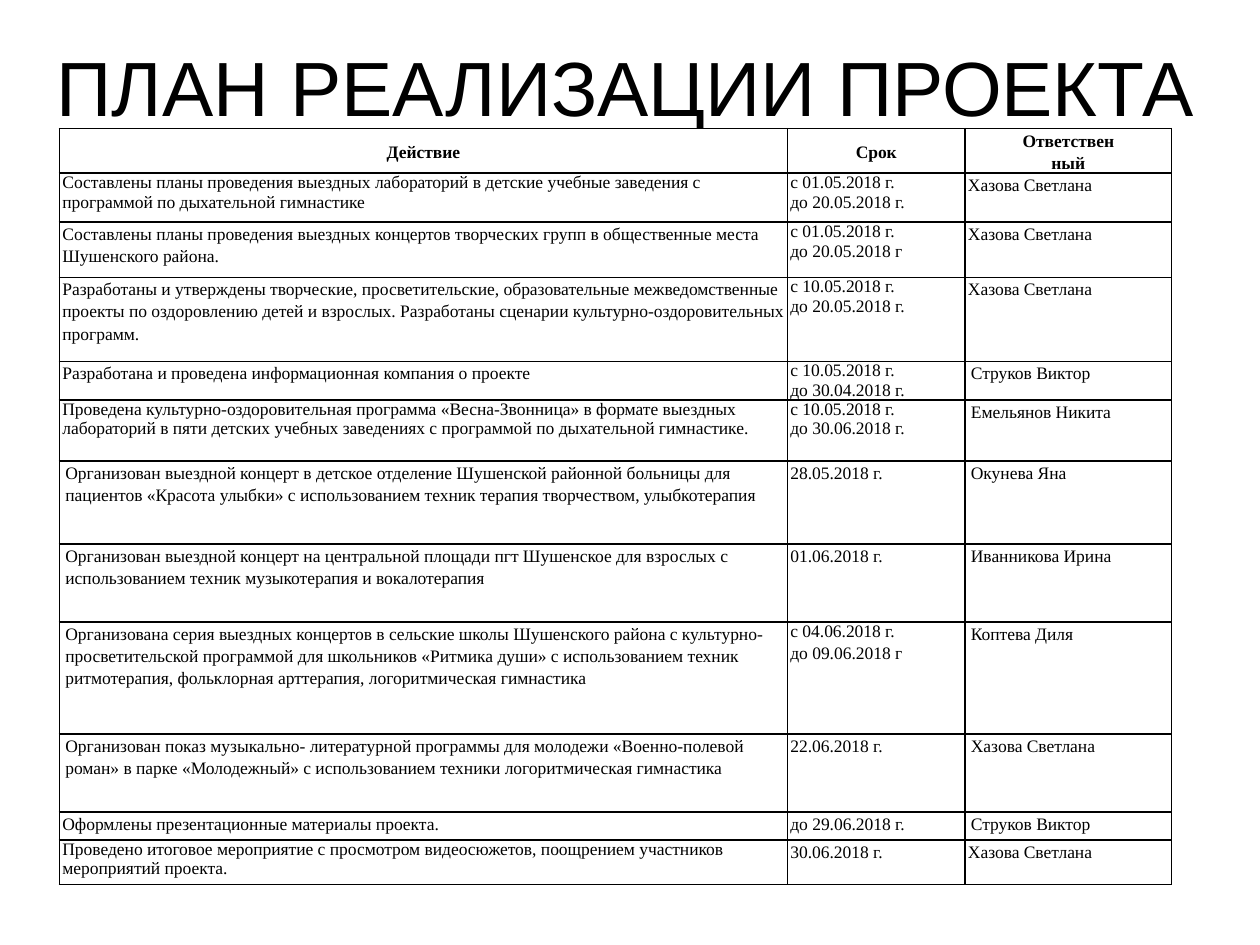
import dataclasses

import lxml.etree
import pptx
import pptx.dml.color
import pptx.enum.text
import pptx.oxml.ns
import pptx.util

Pt = pptx.util.Pt
RGB = pptx.dml.color.RGBColor
ALIGN = pptx.enum.text.PP_ALIGN
ANCHOR = pptx.enum.text.MSO_ANCHOR
qn = pptx.oxml.ns.qn


@dataclasses.dataclass(frozen=True)
class Theme:
    ink: str = "000000"
    paper: str = "FFFFFF"
    head: str = "Arial"
    body: str = "Times New Roman"
    big: float = 43.9
    small: float = 10
    line: float = 1
    pad: float = 1.7
    loose: float = 1.15


THEME = Theme()
COLS = [416, 101.5, 118]
HEADS = ["Действие", "Срок", "Ответствен\nный"]
# Height, action, dates, person, action is single spaced, left indents
ROWS = [
    (28, "Составлены планы проведения выездных лабораторий в детские учебные "
     "заведения с программой по дыхательной гимнастике",
     "с 01.05.2018 г.\nдо 20.05.2018 г.", "Хазова Светлана", True, (0, 0)),
    (31.5, "Составлены планы проведения выездных концертов творческих групп в "
     "общественные места Шушенского района.",
     "с 01.05.2018 г.\nдо 20.05.2018 г", "Хазова Светлана", False, (0, 0)),
    (48, "Разработаны и утверждены творческие, просветительские, "
     "образовательные межведомственные проекты по оздоровлению детей и "
     "взрослых. Разработаны сценарии культурно-оздоровительных программ.",
     "с 10.05.2018 г.\nдо 20.05.2018 г.", "Хазова Светлана", False, (0, 0)),
    (22, "Разработана и проведена информационная компания о проекте",
     "с 10.05.2018 г.\nдо 30.04.2018 г.", "Струков Виктор", False, (0, 1.7)),
    (35, "Проведена культурно-оздоровительная программа «Весна-Звонница» в "
     "формате выездных лабораторий в пяти детских учебных заведениях с "
     "программой по дыхательной гимнастике.",
     "с 10.05.2018 г.\nдо 30.06.2018 г.", "Емельянов Никита", True, (0, 1.7)),
    (47.5, "Организован выездной концерт в детское отделение Шушенской "
     "районной больницы для пациентов «Красота улыбки» с использованием "
     "техник терапия творчеством, улыбкотерапия",
     "28.05.2018 г.", "Окунева Яна", False, (1.7, 1.7)),
    (44.5, "Организован выездной концерт на центральной площади пгт Шушенское "
     "для взрослых с использованием техник музыкотерапия и вокалотерапия",
     "01.06.2018 г.", "Иванникова Ирина", False, (1.7, 1.7)),
    (64, "Организована серия выездных концертов в сельские школы Шушенского "
     "района с культурно-просветительской программой для школьников «Ритмика "
     "души» с использованием техник ритмотерапия, фольклорная арттерапия, "
     "логоритмическая гимнастика",
     "с 04.06.2018 г.\nдо 09.06.2018 г", "Коптева Диля", False, (1.7, 1.7)),
    (44.5, "Организован показ музыкально- литературной программы для молодежи "
     "«Военно-полевой роман» в парке «Молодежный» с использованием техники "
     "логоритмическая гимнастика",
     "22.06.2018 г.", "Хазова Светлана", False, (1.7, 1.7)),
    (16, "Оформлены презентационные материалы проекта.",
     "до 29.06.2018 г.", "Струков Виктор", False, (0, 1.7)),
    (25.5, "Проведено итоговое мероприятие с просмотром видеосюжетов, "
     "поощрением участников мероприятий проекта.",
     "30.06.2018 г.", "Хазова Светлана", True, (0, 0)),
]


def write(frame, text, font=THEME.body, size=THEME.small, bold=False,
          align=ALIGN.LEFT, gap=THEME.loose, left=0):
    """Fill a text frame, one paragraph to a line."""
    frame.text = text
    for par in frame.paragraphs:
        par.alignment = align
        par.line_spacing = gap
        par.space_before = par.space_after = Pt(0)
        if left:
            par._p.get_or_add_pPr().set("marL", str(Pt(left)))
        face = par.runs[0].font
        face.name, face.size, face.bold = font, Pt(size), bold
        face.color.rgb = RGB.from_string(THEME.ink)


def frame_cell(cell):
    """Set the fill, margins and four borders of a cell."""
    cell.fill.solid()
    cell.fill.fore_color.rgb = RGB.from_string(THEME.paper)
    cell.margin_left = cell.margin_right = Pt(THEME.pad)
    cell.margin_top = cell.margin_bottom = 0
    props = cell._tc.get_or_add_tcPr()
    for pos, side in enumerate("LRTB"):
        line = lxml.etree.Element(qn(f"a:ln{side}"), w=str(Pt(THEME.line)))
        fill = lxml.etree.SubElement(line, qn("a:solidFill"))
        lxml.etree.SubElement(fill, qn("a:srgbClr"), val=THEME.ink)
        props.insert(pos, line)


def add_title(slide, x, y, w, h):
    title = slide.shapes.title
    title.left, title.top, title.width, title.height = map(Pt, (x, y, w, h))
    frame = title.text_frame
    frame.word_wrap = True
    frame.auto_size = pptx.enum.text.MSO_AUTO_SIZE.NONE
    frame.vertical_anchor = ANCHOR.TOP
    frame.margin_top = Pt(7.5)
    write(frame, "ПЛАН РЕАЛИЗАЦИИ ПРОЕКТА", font=THEME.head, size=THEME.big,
          align=ALIGN.CENTER, gap=1.0)


def add_plan(slide, x, y, w, h):
    table = slide.shapes.add_table(len(ROWS) + 1, len(COLS),
                                   *map(Pt, (x, y, w, h))).table
    table.first_row = table.horz_banding = False
    for col, width in zip(table.columns, COLS):
        col.width = Pt(width)
    # The header takes the height that the rows leave
    table.rows[0].height = Pt(h - sum(row[0] for row in ROWS))
    for col, text in enumerate(HEADS):
        cell = table.cell(0, col)
        frame_cell(cell)
        cell.vertical_anchor = ANCHOR.MIDDLE
        write(cell.text_frame, text, bold=True, align=ALIGN.CENTER)
    # Steps of the plan
    for num, (tall, act, dates, name, tight, (ind, inset)) in enumerate(ROWS, 1):
        table.rows[num].height = Pt(tall)
        cells = [table.cell(num, col) for col in range(len(COLS))]
        for cell in cells:
            frame_cell(cell)
            cell.vertical_anchor = ANCHOR.TOP
        write(cells[0].text_frame, act, gap=1.0 if tight else THEME.loose,
              left=ind)
        write(cells[1].text_frame, dates,
              gap=1.0 if "\n" in dates else THEME.loose)
        write(cells[2].text_frame, name, left=inset)
        if "09.06" in dates:
            cells[1].text_frame.paragraphs[1].line_spacing = THEME.loose


def main():
    deck = pptx.Presentation()
    deck.slide_width, deck.slide_height = Pt(720), Pt(540)
    slide = deck.slides.add_slide(deck.slide_layouts[5])
    add_title(slide, 11.5, 15, 692, 85)
    add_plan(slide, 34, 73.5, sum(COLS), 432)
    deck.save("out.pptx")


if __name__ == "__main__":
    main()
